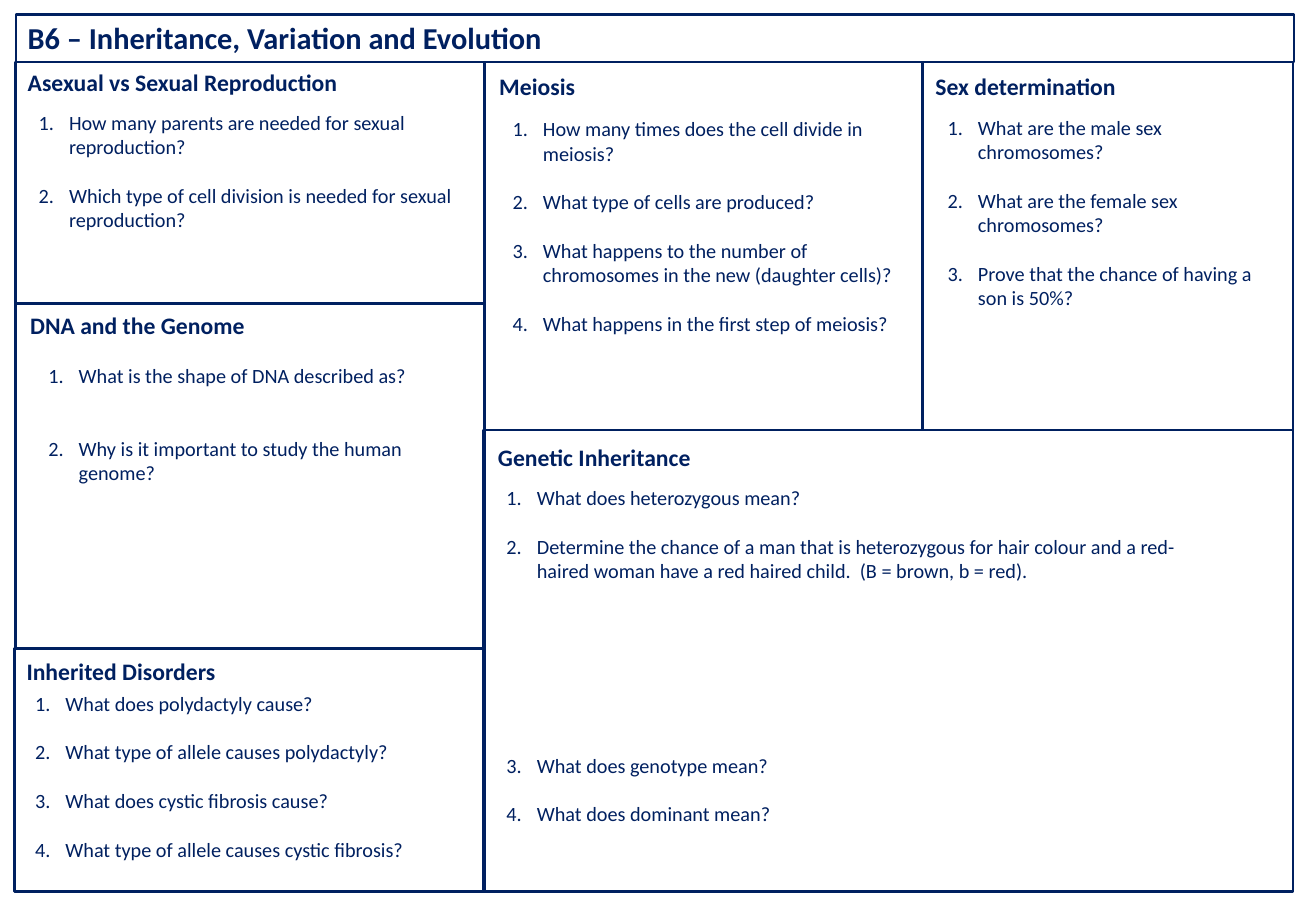
from dataclasses import dataclass

from lxml.etree import SubElement
from pptx import Presentation
from pptx.dml.color import RGBColor
from pptx.enum.shapes import MSO_SHAPE
from pptx.oxml.ns import qn
from pptx.util import Emu, Pt

PX = 9144  # one hundredth of an inch


@dataclass(frozen=True)
class Theme:
    navy: RGBColor = RGBColor(0x00, 0x20, 0x60)
    font: str = "Calibri"
    title_size: float = 18
    heading_size: float = 14
    question_size: float = 12
    question_line: float = 14.4
    border: float = 1.5
    indent: int = 25


@dataclass(frozen=True)
class Section:
    heading: str
    panel: tuple
    heading_box: tuple
    question_box: tuple
    questions: tuple
    answer_lines: tuple  # empty lines left between one question and the next


SECTIONS = (
    Section(
        "Asexual vs Sexual Reproduction",
        (13, 51, 386, 199), (13, 51, 286, 34), (22, 86, 376, 151),
        ("How many parents are needed for sexual reproduction?",
         "Which type of cell division is needed for sexual reproduction?"),
        (1,),
    ),
    Section(
        "DNA and the Genome",
        (13, 250, 386, 284), (15, 251, 224, 34), (30, 294, 356, 131),
        ("What is the shape of DNA described as?",
         "Why is it important to study the human genome?"),
        (2,),
    ),
    Section(
        "Inherited Disorders",
        (12, 534, 387, 200), (12, 536, 286, 34), (19, 564, 356, 172),
        ("What does polydactyly cause?",
         "What type of allele causes polydactyly?",
         "What does cystic fibrosis cause?",
         "What type of allele causes cystic fibrosis?"),
        (1, 1, 1),
    ),
    Section(
        "Meiosis",
        (399, 51, 360, 303), (401, 54, 88, 34), (412, 91, 336, 192),
        ("How many times does the cell divide in meiosis?",
         "What type of cells are produced?",
         "What happens to the number of chromosomes in the new (daughter cells)?",
         "What happens in the first step of meiosis?"),
        (1, 1, 1),
    ),
    Section(
        "Sex determination",
        (759, 51, 305, 303), (760, 54, 286, 34), (770, 90, 286, 172),
        ("What are the male sex chromosomes?",
         "What are the female sex chromosomes?",
         "Prove that the chance of having a son is 50%?"),
        (1, 1),
    ),
    Section(
        "Genetic Inheritance",
        (398, 354, 666, 380), (400, 360, 286, 34), (407, 395, 593, 293),
        ("What does heterozygous mean?",
         "Determine the chance of a man that is heterozygous for hair colour and a "
         "red-haired woman have a red haired child.  (B = brown, b = red).",
         "What does genotype mean?",
         "What does dominant mean?"),
        (1, 7, 1),
    ),
)


class Worksheet:
    def __init__(self, slide, theme):
        self.slide = slide
        self.theme = theme

    def panel(self, box):
        shape = self.slide.shapes.add_shape(MSO_SHAPE.RECTANGLE, *(Emu(n * PX) for n in box))
        shape.shadow.inherit = False
        shape.fill.background()
        shape.line.color.rgb = self.theme.navy
        shape.line.width = Pt(self.theme.border)

    def text_frame(self, box):
        frame = self.slide.shapes.add_textbox(*(Emu(n * PX) for n in box)).text_frame
        frame.word_wrap = True
        return frame

    def set_text(self, paragraph, text, size, bold=False):
        paragraph.text = text
        font = paragraph.font
        font.name = self.theme.font
        font.size = Pt(size)
        font.bold = bold
        font.color.rgb = self.theme.navy

    def heading(self, box, text, size):
        self.set_text(self.text_frame(box).paragraphs[0], text, size, bold=True)

    def number(self, paragraph):
        """Give the paragraph a hanging automatic number."""
        indent = self.theme.indent * PX
        properties = paragraph._p.get_or_add_pPr()
        properties.set("marL", str(indent))
        properties.set("indent", str(-indent))
        SubElement(properties, qn("a:buFont"), typeface="+mj-lt")
        SubElement(properties, qn("a:buAutoNum"), type="arabicPeriod")

    def question_list(self, box, questions, answer_lines):
        frame = self.text_frame(box)
        for index, (question, lines) in enumerate(zip(questions, (0, *answer_lines))):
            paragraph = frame.add_paragraph() if index else frame.paragraphs[0]
            self.number(paragraph)
            paragraph.space_before = Pt(lines * self.theme.question_line)
            self.set_text(paragraph, question, self.theme.question_size)

    def section(self, section):
        self.panel(section.panel)
        self.heading(section.heading_box, section.heading, self.theme.heading_size)
        self.question_list(section.question_box, section.questions, section.answer_lines)


def main():
    presentation = Presentation()
    presentation.slide_width = Emu(1083 * PX)
    presentation.slide_height = Emu(750 * PX)
    slide = presentation.slides.add_slide(presentation.slide_layouts[6])
    theme = Theme()
    worksheet = Worksheet(slide, theme)
    worksheet.panel((13, 12, 1052, 39))
    worksheet.heading((13, 11, 527, 40), "B6 – Inheritance, Variation and Evolution", theme.title_size)
    for section in SECTIONS:
        worksheet.section(section)
    presentation.save("out.pptx")


if __name__ == "__main__":
    main()
